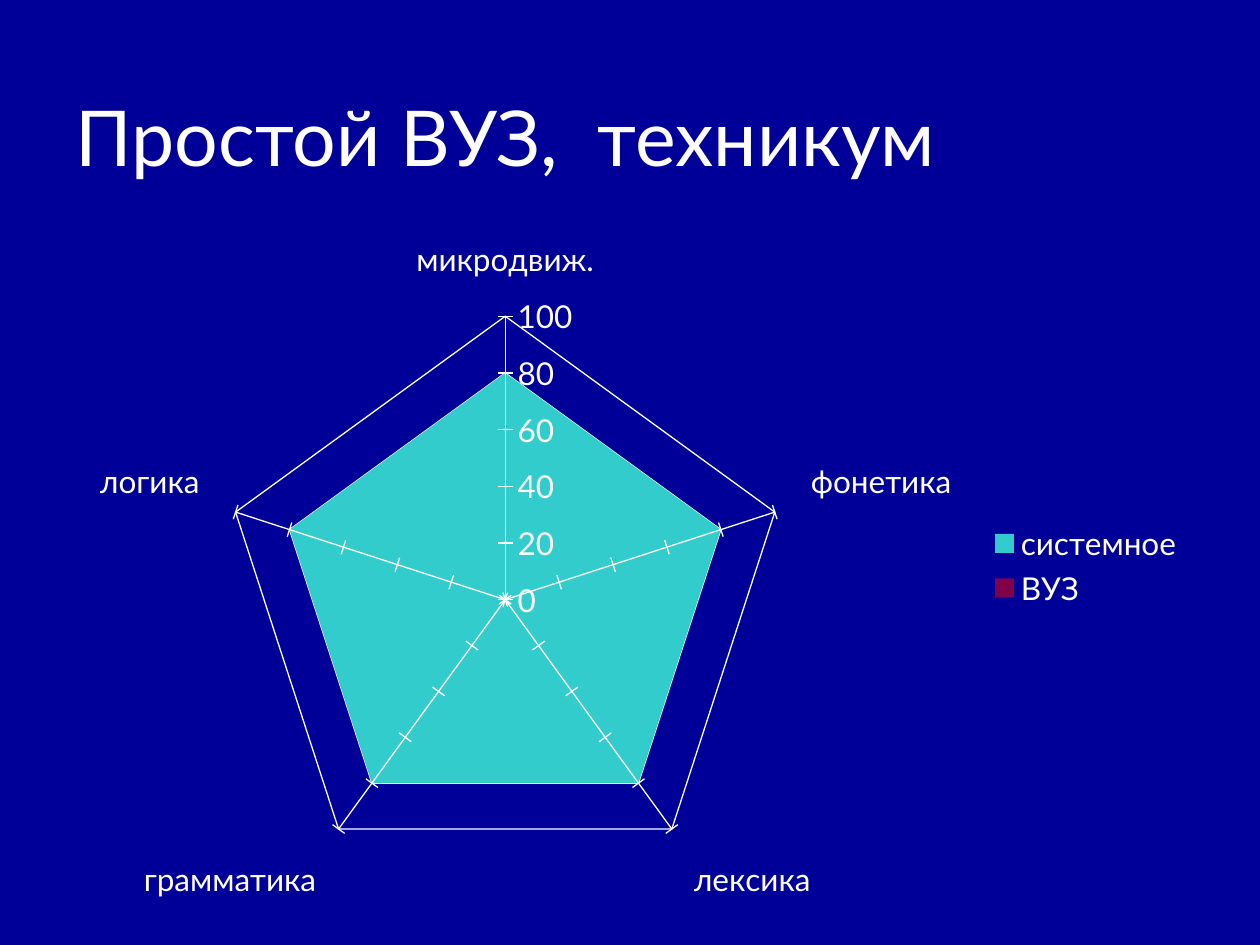
from lxml import etree
from pptx import Presentation
from pptx.chart.data import CategoryChartData
from pptx.dml.color import RGBColor
from pptx.enum.chart import XL_CHART_TYPE, XL_LEGEND_POSITION, XL_TICK_MARK
from pptx.enum.text import MSO_ANCHOR, PP_ALIGN
from pptx.oxml.ns import qn
from pptx.util import Pt

RADAR = XL_CHART_TYPE.RADAR_FILLED
RIGHT = XL_LEGEND_POSITION.RIGHT
CROSS = XL_TICK_MARK.CROSS
MIDDLE = MSO_ANCHOR.MIDDLE
LEFT = PP_ALIGN.LEFT
FONT = "Lato"
WHITE = "FFFFFF"


def color(code):
    return RGBColor.from_string(code)


def style(font, size):
    font.name = FONT
    font.size = Pt(size)
    font.bold = False
    font.color.rgb = color(WHITE)


deck = Presentation()
deck.slide_width, deck.slide_height = Pt(720), Pt(540)
slide = deck.slides.add_slide(deck.slide_layouts[5])
slide.background.fill.solid()
slide.background.fill.fore_color.rgb = color("000099")

# Title
title = slide.shapes.title
title.left, title.top, title.width, title.height = Pt(36), Pt(23), Pt(648), Pt(109)
frame = title.text_frame
frame.text = "Простой ВУЗ,  техникум"
frame.vertical_anchor = MIDDLE
frame.paragraphs[0].alignment = LEFT
style(frame.paragraphs[0].runs[0].font, 44)

# Radar chart
data = CategoryChartData()
data.categories = ["микродвиж.", "фонетика", "лексика", "грамматика", "логика"]
data.add_series("системное", [80] * 5)
data.add_series("ВУЗ", [20, 50, 70, 50, 50])
chart = slide.shapes.add_chart(RADAR, Pt(36), Pt(106.5), Pt(648), Pt(433.5), data).chart
chart.has_title = False
style(chart.font, 18)
chart.has_legend = True
chart.legend.position = RIGHT
chart.legend.include_in_layout = False

plot = chart.plots[0]
for series, code in zip(plot.series, ["33CCCC", "FF0000"]):
    fill = series.format.fill
    fill.solid()
    fill.fore_color.rgb = color(code)
    series.format.line.fill.background()

# The second series is half transparent
tint = plot.series[1].format.fill.fore_color
solid = plot.series[1]._element.find(".//" + qn("a:srgbClr"))
etree.SubElement(solid, qn("a:alpha")).set("val", "50000")

scale = chart.value_axis
scale.minimum_scale, scale.maximum_scale, scale.major_unit = 0, 100, 20
scale.tick_labels.number_format = "General"
scale.tick_labels.number_format_is_linked = False
for axis in (chart.category_axis, scale):
    axis.major_tick_mark = CROSS
    axis.has_major_gridlines = True
    for line in (axis.format.line, axis.major_gridlines.format.line):
        line.color.rgb = color(WHITE)
        line.width = Pt(0.75)

# Fixed place of the plot, as shares of the chart
area = chart._chartSpace.find(".//" + qn("c:plotArea"))
for old in area.findall(qn("c:layout")):
    area.remove(old)
layout = etree.Element(qn("c:layout"))
area.insert(0, layout)
manual = etree.SubElement(layout, qn("c:manualLayout"))
for tag, val in [("layoutTarget", "inner"), ("xMode", "edge"), ("yMode", "edge"),
                 ("x", 0.14), ("y", 0.17), ("w", 0.5), ("h", 0.75)]:
    etree.SubElement(manual, qn("c:" + tag)).set("val", str(val))

deck.save("out.pptx")
